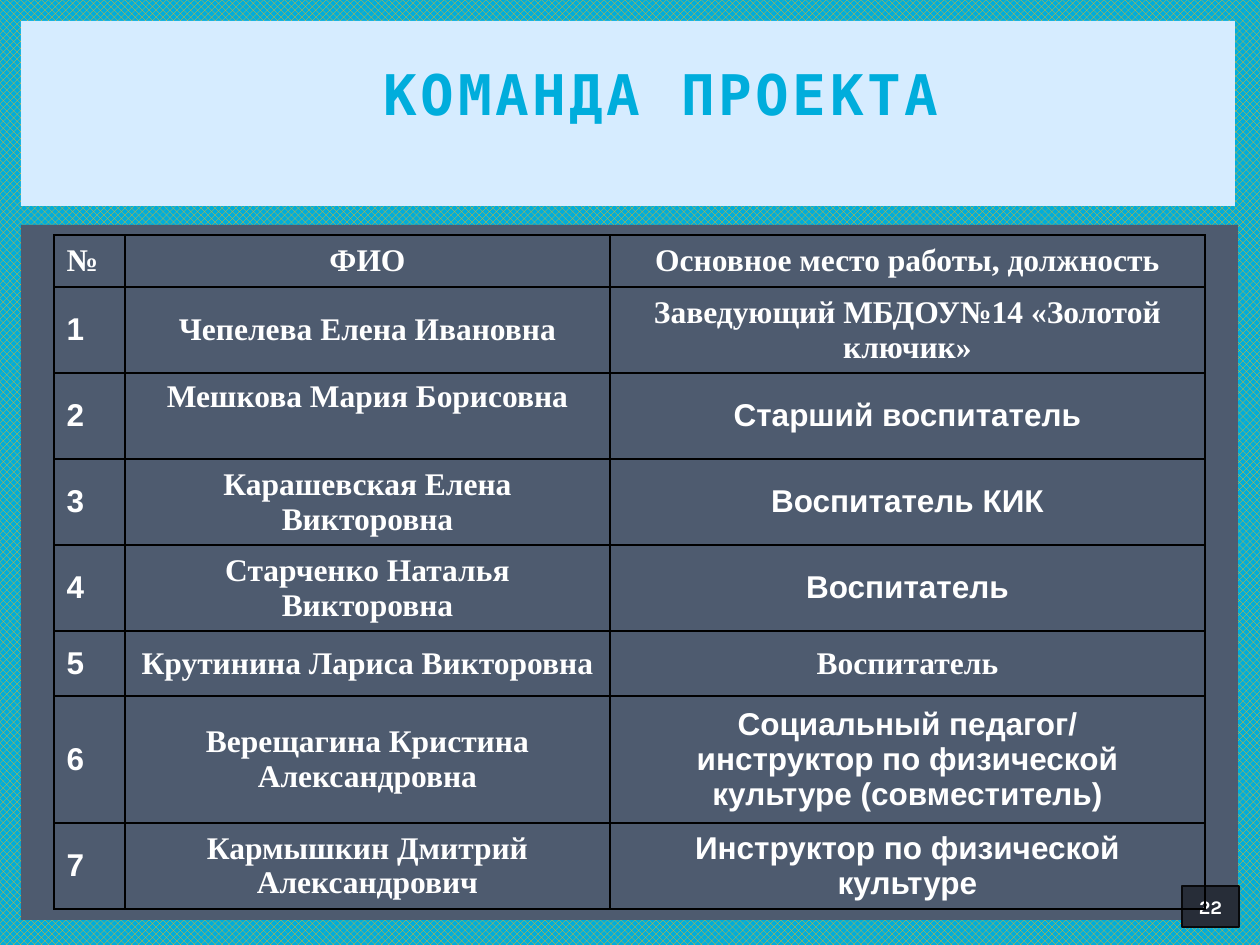
from lxml import etree
from pptx import Presentation
from pptx.dml.color import RGBColor
from pptx.enum.dml import MSO_PATTERN
from pptx.enum.shapes import MSO_SHAPE
from pptx.enum.text import MSO_ANCHOR as Anchor, PP_ALIGN as Align
from pptx.oxml.ns import qn
from pptx.util import Emu, Pt

SCALE = 914400 / 126  # EMU in one px
COLORS = {
    "background": "00ADDC", "pattern": "FEB80A", "header": "D6ECFF",
    "body": "4E5B6F", "badge": "272D38", "badge_line": "08090B",
    "title": "00ADDC", "text": "FFFFFF", "border": "000000",
}
SERIF, SANS = "Times New Roman", "Arial"
COLUMNS = [71, 485, 595]
ROWS = [52, 86, 86, 86, 86, 65, 127, 86]
HEADINGS = ["№", "ФИО", "Основное место работы, должность"]
# name, position, font of the position
TEAM = [
    ("Чепелева Елена Ивановна", "Заведующий МБДОУ№14 «Золотой ключик»", SERIF),
    ("Мешкова Мария Борисовна", "Старший воспитатель", SANS),
    ("Карашевская Елена Викторовна", "Воспитатель КИК", SANS),
    ("Старченко Наталья Викторовна", "Воспитатель", SANS),
    ("Крутинина Лариса Викторовна", "Воспитатель", SERIF),
    ("Верещагина Кристина Александровна",
     "Социальный педагог/\vинструктор по физической культуре (совместитель)", SANS),
    ("Кармышкин Дмитрий Александрович", "Инструктор по физической культуре", SANS),
]
TOP_NAME = "Мешкова Мария Борисовна"


def px(value):
    return Emu(round(value * SCALE))


def color(name):
    return RGBColor.from_string(COLORS[name])


def write(frame, text, align, font_color="text", **formats):
    frame.text = text
    paragraph = frame.paragraphs[0]
    paragraph.alignment = align
    for run in paragraph.runs:
        for key, value in {"bold": True, **formats}.items():
            setattr(run.font, key, value)
        run.font.color.rgb = color(font_color)
    return paragraph


def add_panel(slide, box, fill):
    shape = slide.shapes.add_shape(MSO_SHAPE.RECTANGLE, *map(px, box))
    shape.shadow.inherit = False
    shape.fill.solid()
    shape.fill.fore_color.rgb = color(fill)
    shape.line.fill.background()
    return shape


def add_background(slide):
    fill = slide.background.fill
    fill.patterned()
    fill.pattern = MSO_PATTERN.SOLID_DIAMOND
    fill.fore_color.rgb = color("pattern")
    fill.back_color.rgb = color("background")


def add_header(slide, box):
    left, top, width, height = box
    panel = add_panel(slide, box, "header")
    title = slide.shapes.title
    panel._element.addnext(title._element)  # title in front of its panel
    title.left, title.top = px(left + 42), px(top + 14)
    title.width, title.height = px(width - 17), px(116)
    frame = title.text_frame
    frame.vertical_anchor = Anchor.MIDDLE
    paragraph = write(frame, "КОМАНДА ПРОЕКТА", Align.CENTER, "title",
                      name="DejaVu Sans Mono", size=Pt(32))
    paragraph.runs[0].font._element.set("spc", "200")


def add_badge(slide, box):
    badge = add_panel(slide, box, "badge")
    badge.line.color.rgb = color("badge_line")
    badge.line.width = Pt(1.5)
    frame = badge.text_frame
    for side in ("left", "top", "right", "bottom"):
        setattr(frame, f"margin_{side}", 0)
    frame.vertical_anchor = Anchor.MIDDLE
    write(frame, "22", Align.CENTER, name="Karla", size=Pt(11))


def add_borders(cell):
    properties = cell._tc.get_or_add_tcPr()
    for side in ("lnL", "lnR", "lnT", "lnB"):
        line = etree.SubElement(properties, qn(f"a:{side}"), w=str(Pt(1)))
        fill = etree.SubElement(line, qn("a:solidFill"))
        etree.SubElement(fill, qn("a:srgbClr"), val=COLORS["border"])


def fill_cell(cell, text, font, align):
    add_borders(cell)
    cell.fill.background()
    cell.vertical_anchor = Anchor.TOP if text == TOP_NAME else Anchor.MIDDLE
    write(cell.text_frame, text, align, name=font, size=Pt(18))


def add_team_table(slide, left, top):
    table = slide.shapes.add_table(
        len(ROWS), len(COLUMNS), px(left), px(top), px(sum(COLUMNS)), px(sum(ROWS))).table
    table.first_row = table.horz_banding = False
    for column, width in zip(table.columns, COLUMNS):
        column.width = px(width)
    for row, height in zip(table.rows, ROWS):
        row.height = px(height)

    # Heading row, then one numbered row for each member
    rows = [[(heading, SERIF) for heading in HEADINGS]]
    for number, (name, position, font) in enumerate(TEAM, 1):
        rows.append([(str(number), SANS), (name, SERIF), (position, font)])
    for row, values in zip(table.rows, rows):
        aligns = (Align.LEFT, Align.CENTER, Align.CENTER)
        for cell, (text, font), align in zip(row.cells, values, aligns):
            fill_cell(cell, text, font, align)


def main():
    presentation = Presentation()
    presentation.slide_width, presentation.slide_height = px(1260), px(945)
    slide = presentation.slides.add_slide(presentation.slide_layouts[5])
    add_background(slide)
    add_panel(slide, (21, 225, 1217, 695), "body")
    add_header(slide, (21, 21, 1214, 185))
    add_badge(slide, (1182, 886, 57, 41))
    add_team_table(slide, 54, 235)
    presentation.save("out.pptx")


if __name__ == "__main__":
    main()
